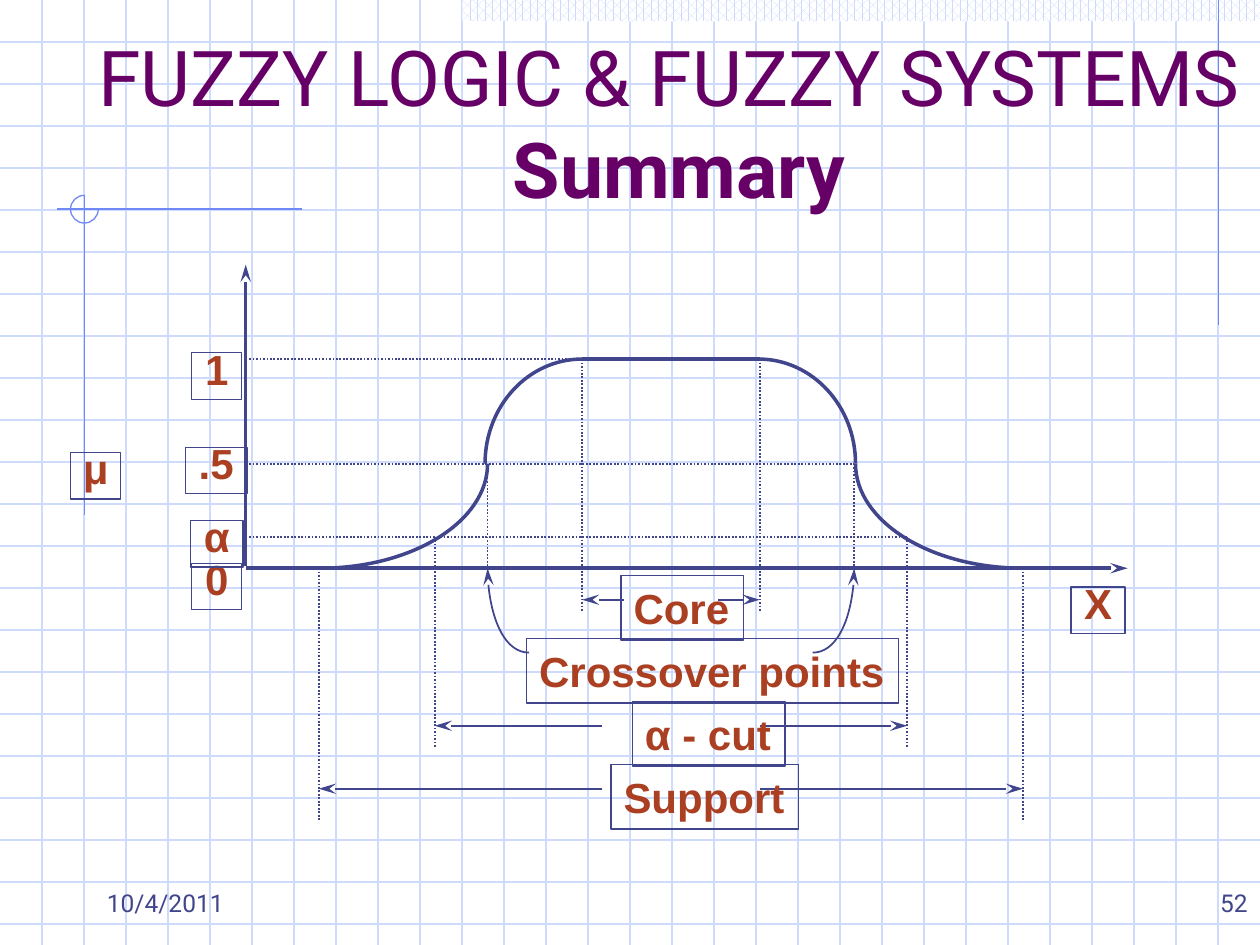
from math import ceil, cos, radians, sin, tan

from lxml import etree
from pptx import Presentation
from pptx.dml.color import RGBColor
from pptx.enum.dml import MSO_LINE, MSO_PATTERN
from pptx.enum.shapes import MSO_CONNECTOR, MSO_SHAPE
from pptx.enum.text import MSO_ANCHOR, MSO_AUTO_SIZE, PP_ALIGN
from pptx.oxml.ns import qn
from pptx.util import Inches, Pt

DOT = MSO_LINE.ROUND_DOT
LEFT, CENTER, RIGHT = PP_ALIGN.LEFT, PP_ALIGN.CENTER, PP_ALIGN.RIGHT
COLORS = {"ink": "40458C", "label": "AA3F22", "title": "660066",
          "rule": "6F89F7", "band": "CFDBFD", "paper": "FFFFFF"}
WIDE, HIGH = 10, 7.5

# Membership levels (y) and the points of the curve on the X axis (x)
ONE, HALF, CUT, BASE = 2.85, 3.68, 4.26, 4.51
AXIS = 1.95
CORE, CROSS, ALPHA, SUPPORT = (4.62, 6.03), (3.87, 6.78), (3.45, 7.2), (2.53, 8.12)

TITLE = "FUZZY LOGIC & FUZZY SYSTEMS \vSummary"
FOOTERS = [("10/4/2011", 0.75, LEFT), ("52", 7.92, RIGHT)]
RULES = [(9.67, 0, 9.67, 2.58), (2.4, 1.66, 0.45, 1.66), (0.67, 1.55, 0.67, 4.09)]
AXES = [(AXIS, BASE, 8.95, BASE), (AXIS, BASE - 0.02, AXIS, 2.1)]
LEVELS = [(ONE, CORE[0]), (HALF, CROSS[1]), (CUT, ALPHA[1])]
DROPS = [(CORE, ONE, 4.85), (CROSS, HALF, BASE), (ALPHA, CUT, 5.93), (SUPPORT, BASE, 6.51)]
# Span, y, inner ends of the left and right arrows
SPANS = [(CORE, 4.76, 4.95, 5.7), (ALPHA, 5.76, 4.78, 6.03), (SUPPORT, 6.26, 4.78, 6.03)]
# Center, radii, start and end angle, clockwise from the right
CURVES = [
    (2.54, HALF, 1.33, 0.83, 0, 90),
    (4.62, HALF, 0.77, 0.83, 180, 270),
    (6.02, HALF, 0.77, 0.83, 270, 360),
    (8.12, HALF, 1.33, 0.83, 90, 180),
]
HOOKS = [(4.2, BASE, 0.33, 0.67, 90, 180), (6.45, BASE, 0.33, 0.67, 90, 0)]
RING = (0.67, 1.66, 0.11, 0.11, 270, 0)
MARKS = [("μ", 0.56, 3.59, 0.4), ("X", 8.5, 4.66, 0.43), (".5", 1.47, 3.55, 0.49),
         ("1", 1.52, 2.8, 0.4), ("0", 1.52, 4.47, 0.4), ("α", 1.51, 4.13, 0.42)]
NAMES = [("Core", 4.93, 0.97), ("Crossover points", 4.18, 2.95),
         ("α - cut", 5.02, 1.21), ("Support", 4.85, 1.49)]


def color(name):
    return RGBColor.from_string(COLORS[name])


def style(font, face, size, name, bold=False):
    font.name, font.size, font.bold = face, Pt(size), bold
    font.color.rgb = color(name)


def stroke(item, name, width, dash=None, arrow=False):
    item.line.color.rgb = color(name)
    item.line.width = Pt(width)
    if dash:
        item.line.dash_style = dash
    if arrow:
        ln = item.line._get_or_add_ln()
        etree.SubElement(ln, qn("a:tailEnd"), type="stealth", w="med", len="lg")


def rule(shapes, ends, name="ink", width=1, dash=None, arrow=False):
    line = shapes.add_connector(MSO_CONNECTOR.STRAIGHT, *map(Inches, ends))
    stroke(line, name, width, dash, arrow)
    etree.SubElement(line._element.spPr, qn("a:effectLst"))


def curve(shapes, arc, name="ink", width=2, arrow=False):
    """Draw part of an ellipse with one cubic curve per quarter."""
    x, y, wide, high, start, end = arc
    parts = ceil(abs(end - start) / 90)
    step = radians(end - start) / parts
    pull = 4 / 3 * tan(step / 4)

    def spot(turn, shift=0):
        return (Inches(x + wide * (cos(turn) - shift * sin(turn))),
                Inches(y + high * (sin(turn) + shift * cos(turn))))

    turns = [radians(start) + step * i for i in range(parts + 1)]
    dots = []
    for a, b in zip(turns, turns[1:]):
        dots += [spot(a, pull), spot(b, -pull), spot(b)]
    pen = shapes.build_freeform(*spot(turns[0]))
    pen.add_line_segments(dots, close=False)
    item = pen.convert_to_shape()
    legs = list(item._element.iter(qn("a:lnTo")))
    for i in range(0, len(legs), 3):
        bend = etree.Element(qn("a:cubicBezTo"))
        legs[i].addprevious(bend)
        for leg in legs[i:i + 3]:
            bend.append(leg[0])
            leg.getparent().remove(leg)
    item.fill.background()
    item.shadow.inherit = False
    stroke(item, name, width, arrow=arrow)


def label(shapes, text, x, y, wide, high, align=LEFT, gap=1.0):
    box = shapes.add_shape(MSO_SHAPE.RECTANGLE, *map(Inches, (x, y, wide, high)))
    box.fill.background()
    box.shadow.inherit = False
    stroke(box, "ink", 0.75)
    frame = box.text_frame
    frame.text = text
    frame.word_wrap = False
    frame.vertical_anchor = MSO_ANCHOR.TOP
    para = frame.paragraphs[0]
    para.alignment, para.line_spacing = align, gap
    style(para.runs[0].font, "Arial", 24, "label", True)


def decorate(shapes):
    for i in range(1, 23):
        rule(shapes, (0, i / 3, WIDE, i / 3), "band", 0.75)
    for i in range(1, 30):
        rule(shapes, (i / 3, 0, i / 3, HIGH), "band", 0.75)
    band = shapes.add_shape(MSO_SHAPE.RECTANGLE, *map(Inches, (3.67, 0, 6.33, 0.17)))
    band.fill.patterned()
    band.fill.pattern = MSO_PATTERN.PERCENT_60
    band.fill.fore_color.rgb = color("band")
    band.fill.back_color.rgb = color("paper")
    band.line.fill.background()
    band.shadow.inherit = False
    for ends in RULES:
        rule(shapes, ends, "rule", 0.75)
    curve(shapes, RING, "rule", 0.75)
    for text, x, align in FOOTERS:
        box = shapes.add_textbox(*map(Inches, (x, 6.83, 2.08, 0.5)))
        frame = box.text_frame
        frame.text = text
        frame.word_wrap = True
        frame.vertical_anchor = MSO_ANCHOR.BOTTOM
        frame.paragraphs[0].alignment = align
        style(frame.paragraphs[0].runs[0].font, "Roboto", 14, "ink")


def plot(shapes):
    for ends in AXES:
        rule(shapes, ends, width=2, arrow=True)
    for y, end in LEVELS:
        rule(shapes, (AXIS, y, end, y), dash=DOT)
    for pair, top, low in DROPS:
        for x in pair:
            rule(shapes, (x, top, x, low), dash=DOT)
    for arc in CURVES:
        curve(shapes, arc)
    rule(shapes, (CORE[0], ONE, CORE[1], ONE), width=2)
    for arc in HOOKS:
        curve(shapes, arc, width=1, arrow=True)
    for pair, y, *inner in SPANS:
        for start, end in zip(inner, pair):
            rule(shapes, (start, y, end, y), arrow=True)
    for text, x, y, wide in MARKS:
        label(shapes, text, x, y, wide, 0.37, CENTER, 0.65)
    for i, (text, x, wide) in enumerate(NAMES):
        label(shapes, text, x, 4.57 + 0.5 * i, wide, 0.51)


def head(shapes):
    title = shapes.title
    title.left, title.top, title.width, title.height = map(Inches, (0.42, 0.5, 9.94, 1.25))
    frame = title.text_frame
    frame.text = TITLE
    frame.auto_size = MSO_AUTO_SIZE.NONE
    frame.vertical_anchor = MSO_ANCHOR.BOTTOM
    para = frame.paragraphs[0]
    para.alignment = CENTER
    for run, bold in zip(para.runs, (False, True)):
        style(run.font, "Roboto", 44, "title", bold)
    shapes._spTree.append(title._element)  # bring to front


def main():
    deck = Presentation()
    deck.slide_width, deck.slide_height = Inches(WIDE), Inches(HIGH)
    shapes = deck.slides.add_slide(deck.slide_layouts[5]).shapes
    decorate(shapes)
    plot(shapes)
    head(shapes)
    deck.save("out.pptx")


if __name__ == "__main__":
    main()
